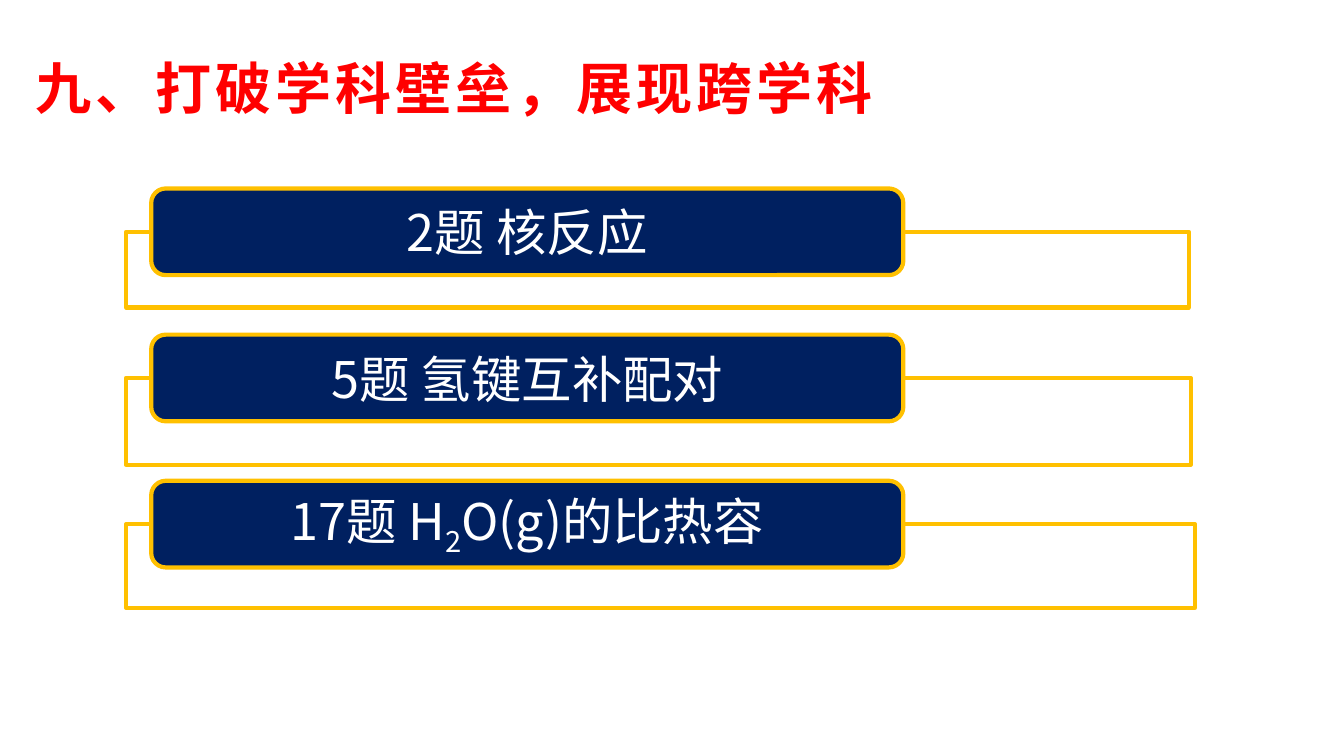
"""Build the slide on interdisciplinary exam questions."""
from pptx import Presentation
from pptx.dml.color import RGBColor
from pptx.enum import shapes as shp, text as txt
from pptx.util import Inches, Pt

FONT = "Noto Sans CJK SC"
COLORS = {"title": "FF0000", "panel": "002060", "gold": "FFC000", "label": "FFFFFF"}
PANEL_LEFT, PANEL_TOP, PANEL_WIDTH, PANEL_HEIGHT = 1.5, 1.87, 7.46, 0.86
PITCH = 1.45
LOOP_LEFT = 1.25
QUESTIONS = [
    ([("2题 核反应", False)], 11.79, 3.05),
    ([("5题 氢键互补配对", False)], 11.81, 4.61),
    ([("17题 H", False), ("2", True), ("O(g)的比热容", False)], 11.85, 6.03),
]


def color(name):
    """Return a named colour."""
    return RGBColor.from_string(COLORS[name])


def add_run(paragraph, wording, size, color_name):
    """Append a formatted run in the slide font and return it."""
    run = paragraph.add_run()
    run.text = wording
    run.font.size = Pt(size)
    run.font.name = FONT
    run.font.color.rgb = color(color_name)
    properties = run.font._element
    east_asian = properties.makeelement(
        "{http://schemas.openxmlformats.org/drawingml/2006/main}ea", {"typeface": FONT})
    properties.find("{*}latin").addnext(east_asian)
    return run


def outline(shape):
    """Give a shape the gold outline without a shadow."""
    shape.shadow.inherit = False
    shape.line.color.rgb = color("gold")
    shape.line.width = Pt(3)


def add_title(slide, left, top, width, height):
    """Place the heading in the title placeholder."""
    heading = slide.shapes.title
    heading.left, heading.top = Inches(left), Inches(top)
    heading.width, heading.height = Inches(width), Inches(height)
    frame = heading.text_frame
    frame.auto_size = txt.MSO_AUTO_SIZE.NONE
    frame.vertical_anchor = txt.MSO_ANCHOR.MIDDLE
    paragraph = frame.paragraphs[0]
    paragraph.alignment = txt.PP_ALIGN.LEFT
    run = add_run(paragraph, "九、打破学科壁垒，展现跨学科", 40, "title")
    run.font.bold = True
    run.font._element.set("spc", "300")


def add_question(slide, left, top, width, height, wording, loop_right, loop_bottom):
    """Draw a question panel and the line looping below it."""
    middle = top + height / 2
    corners = [(LOOP_LEFT, middle), (LOOP_LEFT, loop_bottom), (loop_right, loop_bottom),
               (loop_right, middle), (left + width, middle)]
    builder = slide.shapes.build_freeform(Inches(left), Inches(middle))
    builder.add_line_segments([(Inches(x), Inches(y)) for x, y in corners], close=False)
    loop = builder.convert_to_shape()
    loop.fill.background()
    outline(loop)

    panel = slide.shapes.add_shape(
        shp.MSO_SHAPE.ROUNDED_RECTANGLE,
        Inches(left), Inches(top), Inches(width), Inches(height))
    panel.fill.solid()
    panel.fill.fore_color.rgb = color("panel")
    outline(panel)
    frame = panel.text_frame
    frame.word_wrap = True
    frame.vertical_anchor = txt.MSO_ANCHOR.MIDDLE
    paragraph = frame.paragraphs[0]
    paragraph.alignment = txt.PP_ALIGN.CENTER
    for part, subscript in wording:
        run = add_run(paragraph, part, 36, "label")
        if subscript:
            run.font._element.set("baseline", "-25000")


def main():
    """Build and save the presentation."""
    deck = Presentation()
    deck.slide_width, deck.slide_height = Inches(13.33), Inches(7.5)
    slide = deck.slides.add_slide(deck.slide_layouts[5])
    add_title(slide, 0.25, 0.27, 10.31, 1.19)
    for row, (wording, loop_right, loop_bottom) in enumerate(QUESTIONS):
        add_question(slide, PANEL_LEFT, PANEL_TOP + row * PITCH, PANEL_WIDTH,
                     PANEL_HEIGHT, wording, loop_right, loop_bottom)
    deck.save("out.pptx")


if __name__ == "__main__":
    main()
